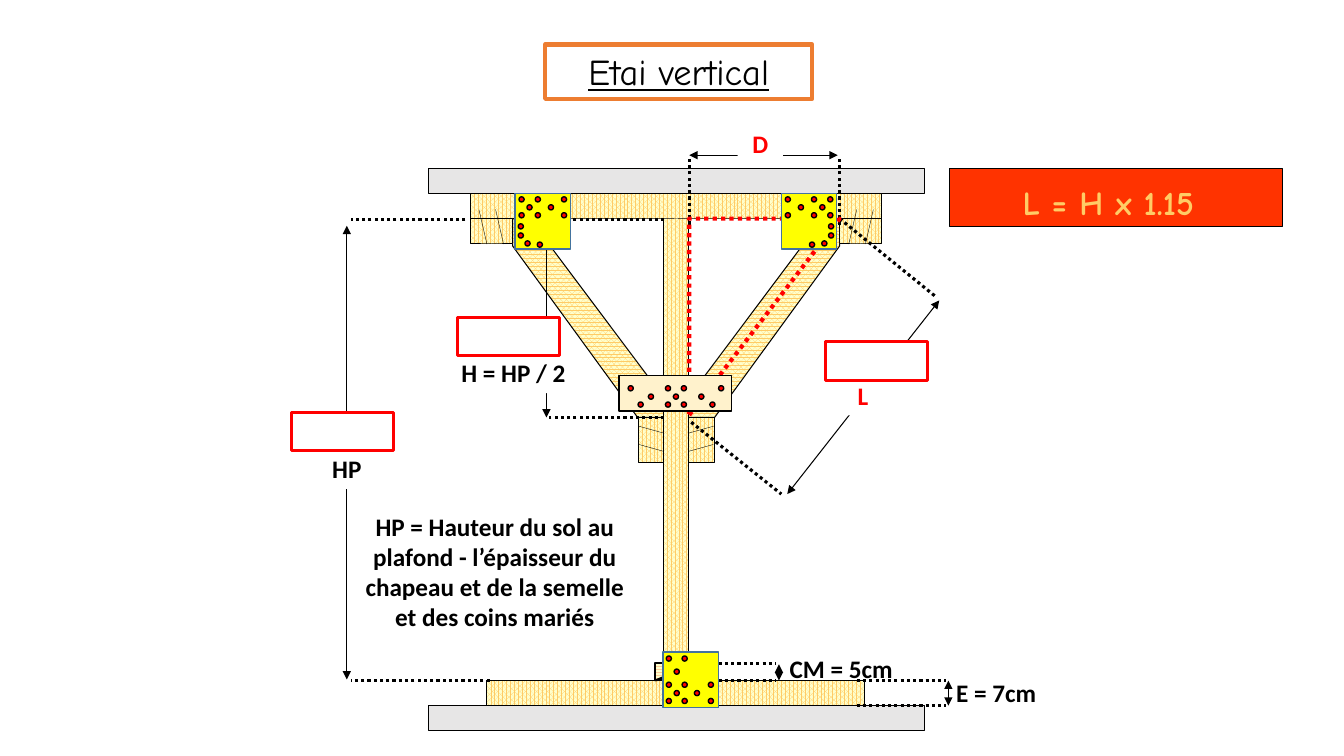
from lxml.etree import SubElement
from pptx import Presentation
from pptx.dml.color import RGBColor
from pptx.enum.dml import MSO_LINE, MSO_PATTERN
from pptx.enum.shapes import MSO_CONNECTOR, MSO_SHAPE
from pptx.enum.text import MSO_ANCHOR, PP_ALIGN
from pptx.oxml.ns import qn
from pptx.util import Cm, Pt

COLOURS = {
    "black": "000000", "white": "FFFFFF", "grey": "E7E6E6", "orange": "ED7D31",
    "grain": "FFCC66", "wood": "FFFFCC", "wedge": "FFCC99", "gusset": "FFF2CC",
    "red": "FF0000", "banner": "FF3300", "plate": "FFFF00", "plate edge": "43739E",
}
RGB = {name: RGBColor.from_string(value) for name, value in COLOURS.items()}
PATTERNS = {
    "grain": MSO_PATTERN.PERCENT_75,
    "wedge": MSO_PATTERN.ZIG_ZAG,
}


def paint(shape, fill, line="black", width=0.75):
    shape.shadow.inherit = False
    if fill in PATTERNS:
        shape.fill.patterned()
        shape.fill.pattern = PATTERNS[fill]
        shape.fill.fore_color.rgb = RGB[fill]
        shape.fill.back_color.rgb = RGB["wood"]
    elif fill:
        shape.fill.solid()
        shape.fill.fore_color.rgb = RGB[fill]
    else:
        shape.fill.background()
    if line:
        shape.line.color.rgb = RGB[line]
        shape.line.width = Pt(width)
    else:
        shape.line.fill.background()


def draw_line(start_x, start_y, end_x, end_y, width, style=None):
    connector = shapes.add_connector(
        MSO_CONNECTOR.STRAIGHT, Cm(start_x), Cm(start_y), Cm(end_x), Cm(end_y))
    connector.line.color.rgb = RGB["black"]
    connector.line.width = Pt(width)
    if style == "dots":
        connector.line.dash_style = MSO_LINE.ROUND_DOT
    properties = connector._element.spPr
    if style == "arrows":
        for end in ("a:headEnd", "a:tailEnd"):
            SubElement(properties.find(qn("a:ln")), qn(end), type="triangle")
    SubElement(properties, qn("a:effectLst"))


presentation = Presentation()
presentation.slide_width = Cm(33.87)
presentation.slide_height = Cm(19.05)
slide = presentation.slides.add_slide(presentation.slide_layouts[5])
shapes = slide.shapes

title = shapes.title
title_format = {"left": 13.74, "top": 1.12, "width": 6.73, "height": 1.37}
for name, value in title_format.items():
    setattr(title, name, Cm(value))
title.text_frame.text = "Etai vertical"
title.text_frame.vertical_anchor = MSO_ANCHOR.TOP
title.line.color.rgb = RGB["orange"]
title.line.width = Pt(3)
title_paragraph = title.text_frame.paragraphs[0]
title_paragraph.alignment = PP_ALIGN.CENTER
for name, value in {"size": Pt(26), "name": "Comic Neue", "underline": True}.items():
    setattr(title_paragraph.font, name, value)
title_paragraph.font.color.rgb = RGB["black"]

supports = [
    ("grey", 10.8, 4.24, 12.5, 0.64, 0.75),
    ("grain", 12.27, 17.15, 9.53, 0.64, 0.75),
    ("wedge", 16.51, 16.71, 1.07, 0.43, 1.5),
    ("grey", 10.8, 17.78, 12.5, 0.64, 0.75),
]
for fill, left, top, width, height, line_width in supports:
    support = shapes.add_shape(
        MSO_SHAPE.RECTANGLE, Cm(left), Cm(top), Cm(width), Cm(height))
    paint(support, fill, width=line_width)
draw_line(17.58, 16.71, 16.51, 17.15, 1.5)

axis = 17.04
brace_outline = [(0.28, 10.06), (3.69, 5.51), (4.12, 5.51),
                 (4.12, 6.2), (0.97, 10.52), (0.28, 10.52)]
for side in (1, -1):
    points = [(Cm(axis + side * x), Cm(y)) for x, y in brace_outline]
    builder = shapes.build_freeform(*points[0])
    builder.add_line_segments(points[1:], close=True)
    paint(builder.convert_to_shape(), "grain")

block_pairs = [
    (0.64, 10.53, 0.64, 1.12, [(0.11, 10.97, 0.94, 10.74), (0.11, 11.43, 0.94, 11.2)]),
    (4.65, 5.51, 1.07, 0.64, [(4.55, 5.28, 4.35, 6.15), (4.97, 5.28, 4.77, 6.15)]),
]
beams = [[(16.71, 5.51, 0.64, 11.23), (11.86, 4.88, 10.36, 0.64)], []]
for (offset, top, width, height, grain_lines), next_beams in zip(block_pairs, beams):
    for side in (1, -1):
        block = shapes.add_shape(
            MSO_SHAPE.RECTANGLE, Cm(axis + side * offset - width / 2), Cm(top),
            Cm(width), Cm(height))
        paint(block, "grain")
        for start_x, start_y, end_x, end_y in grain_lines:
            draw_line(axis + side * start_x, start_y, axis + side * end_x, end_y, 0.25)
    for beam_box in next_beams:
        beam = shapes.add_shape(MSO_SHAPE.RECTANGLE, *map(Cm, beam_box))
        paint(beam, "grain")

dimension_arrows = [
    (8.74, 5.69, 8.74, 17.12), (13.77, 5.59, 13.77, 10.52),
    (19.84, 12.45, 23.67, 7.57), (23.9, 17.15, 23.9, 17.78),
    (19.63, 16.74, 19.63, 17.15), (21.11, 3.91, 17.37, 3.91),
]
extension_lines = [
    (12.34, 17.15, 8.84, 17.15), (11.73, 5.54, 8.84, 5.54),
    (16.74, 10.52, 13.84, 10.52), (16.74, 5.54, 13.84, 5.54),
    (21.16, 5.51, 23.6, 7.49), (17.42, 10.64, 19.69, 12.45),
    (21.59, 17.78, 23.83, 17.78), (21.59, 17.15, 23.83, 17.15),
    (17.32, 17.15, 19.56, 17.15), (17.32, 16.71, 19.56, 16.71),
    (17.37, 5.66, 17.37, 3.96), (21.16, 5.66, 21.16, 3.96),
]
for line_ends in dimension_arrows:
    draw_line(*line_ends, 0.75, "arrows")
for line_ends in extension_lines:
    draw_line(*line_ends, 2.25, "dots")

banner = shapes.add_shape(
    MSO_SHAPE.RECTANGLE, Cm(23.93), Cm(4.24), Cm(8.38), Cm(1.47))
paint(banner, "banner")

explanation = ("HP = Hauteur du sol au plafond - l’épaisseur du chapeau "
               "et de la semelle et des coins mariés")
labels = [
    ("HP", 7.8, 11.3, 1.88, 1.02, "white", "black", "Calibri", 18),
    (explanation, 8.84, 12.75, 7.26, 3.33, None, "black", "Calibri", 18),
    ("L = H x 1.15", 23.8, 4.45, 8.26, 1.3, None, "grain", "Comic Neue", 24),
    ("H = HP / 2", 11.2, 8.89, 3.48, 1.02, "white", "black", "Calibri", 18),
    ("L", 21.18, 9.45, 1.14, 1.02, "white", "red", "Calibri", 18),
    ("E = 7cm", 23.62, 16.94, 2.97, 1.02, None, "black", "Calibri", 18),
    ("CM = 5cm", 19.18, 16.33, 4.04, 1.02, None, "black", "Calibri", 18),
    ("D", 18.59, 3.12, 1.14, 1.02, "white", "red", "Calibri", 18),
]
for text, left, top, width, height, fill, colour, font_name, size in labels:
    label = shapes.add_textbox(Cm(left), Cm(top), Cm(width), Cm(height))
    paint(label, fill, None)
    label.text_frame.word_wrap = True
    label.text_frame.text = text
    paragraph = label.text_frame.paragraphs[0]
    paragraph.alignment = PP_ALIGN.CENTER
    for name, value in {"name": font_name, "size": Pt(size), "bold": True}.items():
        setattr(paragraph.font, name, value)
    paragraph.font.color.rgb = RGB[colour]

builder = shapes.build_freeform(Cm(17.37), Cm(10.46))
builder.add_line_segments([(Cm(21.16), Cm(5.51)), (Cm(17.37), Cm(5.51))], close=True)
triangle = builder.convert_to_shape()
paint(triangle, None, "red", 3)
triangle.line.dash_style = MSO_LINE.ROUND_DOT

for left, top in [(7.34, 10.39), (20.8, 8.61), (11.53, 8)]:
    answer_box = shapes.add_shape(
        MSO_SHAPE.RECTANGLE, Cm(left), Cm(top), Cm(2.57), Cm(0.97))
    paint(answer_box, "white", "red", 2.25)

nail_size = 0.13
plate_size = 1.4
foot_nails = [(0.48, 0.76), (0.08, 0.76), (0.08, 1.17), (0.48, 1.17), (0.28, 0.97),
              (0.79, 0.97), (1.14, 0.76), (1.14, 1.17), (0.48, 0.1), (0.08, 0.1),
              (0.28, 0.43)]
left_nails = [(0.51, 0.48), (0.51, 0.08), (0.1, 0.08), (0.1, 0.48), (0.3, 0.28),
              (0.08, 0.99), (0.56, 1.22), (0.25, 1.19), (1.17, 0.48), (1.17, 0.08),
              (0.84, 0.28), (0.08, 0.76)]
right_nails = [(plate_size - nail_size - x, y) for x, y in left_nails]
gusset_nails = [(1.57, 0.25), (1.17, 0.25), (1.17, 0.66), (1.57, 0.66), (1.37, 0.46),
                (2.51, 0.25), (2.29, 0.66), (2.01, 0.46), (0.23, 0.25), (0.48, 0.66),
                (0.74, 0.46)]
plates = [
    (16.71, 16.43, plate_size, plate_size, "plate", "plate edge", foot_nails),
    (12.98, 4.88, plate_size, plate_size, "plate", "plate edge", left_nails),
    (19.69, 4.88, plate_size, plate_size, "plate", "plate edge", right_nails),
    (15.6, 9.47, 2.84, 0.89, "gusset", "black", gusset_nails),
]
for left, top, width, height, fill, edge, nails in plates:
    plate = shapes.add_shape(
        MSO_SHAPE.RECTANGLE, Cm(left), Cm(top), Cm(width), Cm(height))
    paint(plate, fill, edge, 1)
    for x, y in nails:
        nail = shapes.add_shape(
            MSO_SHAPE.OVAL, Cm(left + x), Cm(top + y), Cm(nail_size), Cm(nail_size))
        paint(nail, "red", "black", 1)

presentation.save("out.pptx")
